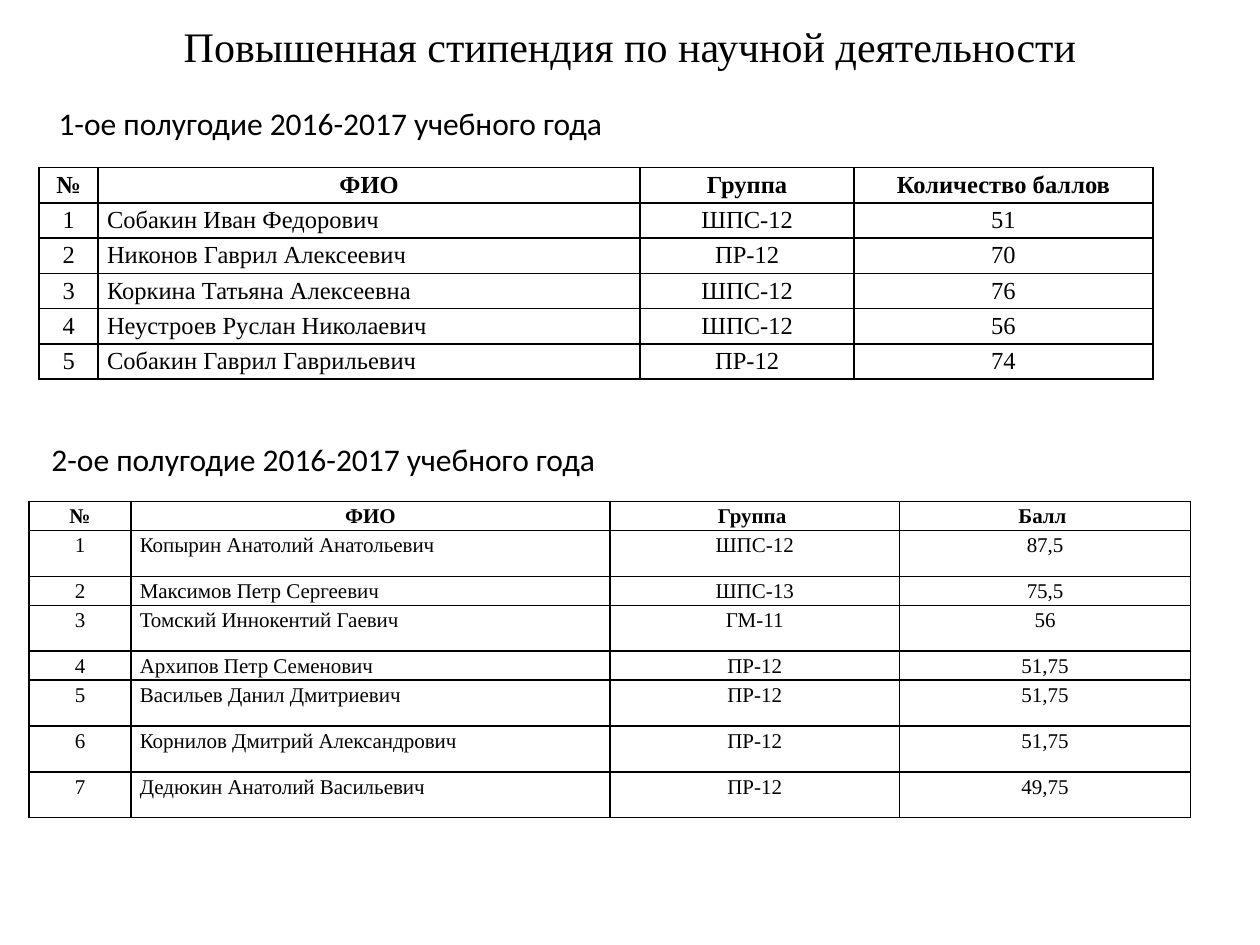
from lxml.etree import SubElement
from pptx import Presentation
from pptx.dml.color import RGBColor
from pptx.enum.text import MSO_ANCHOR, PP_ALIGN
from pptx.oxml.ns import qn
from pptx.util import Inches, Pt

BLACK = RGBColor(0x00, 0x00, 0x00)
SERIF = "Times New Roman"
SANS = "Calibri"
SLIDE_WIDTH, SLIDE_HEIGHT = 10, 7.5
NAME_COLUMN = 1

FIRST_HALF = [
    ("№", "ФИО", "Группа", "Количество баллов"),
    ("1", "Собакин Иван Федорович", "ШПС-12", "51"),
    ("2", "Никонов Гаврил Алексеевич", "ПР-12", "70"),
    ("3", "Коркина Татьяна Алексеевна", "ШПС-12", "76"),
    ("4", "Неустроев Руслан Николаевич", "ШПС-12", "56"),
    ("5", "Собакин Гаврил Гаврильевич", "ПР-12", "74"),
]
SECOND_HALF = [
    ("№", "ФИО", "Группа ", "Балл "),
    ("1", "Копырин Анатолий Анатольевич", "ШПС-12", "87,5"),
    ("2", "Максимов Петр Сергеевич", "ШПС-13", "75,5"),
    ("3", "Томский Иннокентий Гаевич", "ГМ-11", "56"),
    ("4", "Архипов Петр Семенович", "ПР-12", "51,75"),
    ("5", "Васильев Данил Дмитриевич", "ПР-12", "51,75"),
    ("6", "Корнилов Дмитрий Александрович", "ПР-12", "51,75"),
    ("7", "Дедюкин Анатолий Васильевич", "ПР-12", "49,75"),
]


def write_text(frame, text, size, font=SERIF, bold=False,
               align=PP_ALIGN.LEFT, line_spacing=None):
    paragraph = frame.paragraphs[0]
    paragraph.alignment = align
    paragraph.line_spacing = line_spacing
    run = paragraph.add_run()
    run.text = text
    run.font.size = Pt(size)
    run.font.name = font
    run.font.bold = bold
    run.font.color.rgb = BLACK


def add_heading(slide, text):
    heading = slide.shapes.add_textbox(
        Inches(0.05 * SLIDE_WIDTH), Inches(0.04 * SLIDE_HEIGHT),
        Inches(0.9 * SLIDE_WIDTH), Inches(0.48))
    frame = heading.text_frame
    frame.word_wrap = True
    frame.vertical_anchor = MSO_ANCHOR.MIDDLE
    frame.margin_bottom = Inches(0.4)
    write_text(frame, text, 24, align=PP_ALIGN.CENTER)


def add_half_label(slide, text, top, width):
    label = slide.shapes.add_textbox(
        Inches(0.31), Inches(top), Inches(width), Inches(0.4))
    label.text_frame.word_wrap = False
    write_text(label.text_frame, text, 18, font=SANS)


def draw_borders(cell):
    properties = cell._tc.get_or_add_tcPr()
    for position, side in enumerate(("a:lnL", "a:lnR", "a:lnT", "a:lnB")):
        line = SubElement(properties, qn(side), w=str(Pt(1)))
        fill = SubElement(line, qn("a:solidFill"))
        SubElement(fill, qn("a:srgbClr"), val=str(BLACK))
        properties.insert(position, line)


def add_score_table(slide, scores, left, top, columns, rows, size):
    table = slide.shapes.add_table(
        len(rows), len(columns), Inches(left), Inches(top),
        Inches(sum(columns)), Inches(sum(rows))).table
    for column, width in zip(table.columns, columns):
        column.width = Inches(width)
    for row_index, (row, height) in enumerate(zip(table.rows, rows)):
        row.height = Inches(height)
        is_header = row_index == 0
        for column_index, text in enumerate(scores[row_index]):
            cell = table.cell(row_index, column_index)
            cell.margin_left = cell.margin_right = Inches(0.07)
            cell.margin_top = cell.margin_bottom = 0
            cell.fill.background()
            draw_borders(cell)
            is_name = column_index == NAME_COLUMN and not is_header
            write_text(cell.text_frame, text, size, bold=is_header,
                       align=PP_ALIGN.LEFT if is_name else PP_ALIGN.CENTER,
                       line_spacing=1.15)


def main():
    deck = Presentation()
    deck.slide_width = Inches(SLIDE_WIDTH)
    deck.slide_height = Inches(SLIDE_HEIGHT)
    slide = deck.slides.add_slide(deck.slide_layouts[6])

    add_heading(slide, "Повышенная стипендия по научной деятельности")
    add_half_label(slide, " 1-ое полугодие 2016-2017 учебного года", 0.78, 4.68)
    add_half_label(slide, "2-ое полугодие 2016-2017 учебного года", 3.44, 4.63)

    low = 0.23
    tall = (2.51 - 3 * low) / 5
    add_score_table(slide, SECOND_HALF, 0.23, 3.98, [0.81, 3.8, 2.3, 2.31],
                    [low, tall, low, tall, low, tall, tall, tall], 12)
    add_score_table(slide, FIRST_HALF, 0.31, 1.33, [0.47, 4.3, 1.7, 2.37],
                    [0.28] * len(FIRST_HALF), 14)
    deck.save("out.pptx")


if __name__ == "__main__":
    main()
